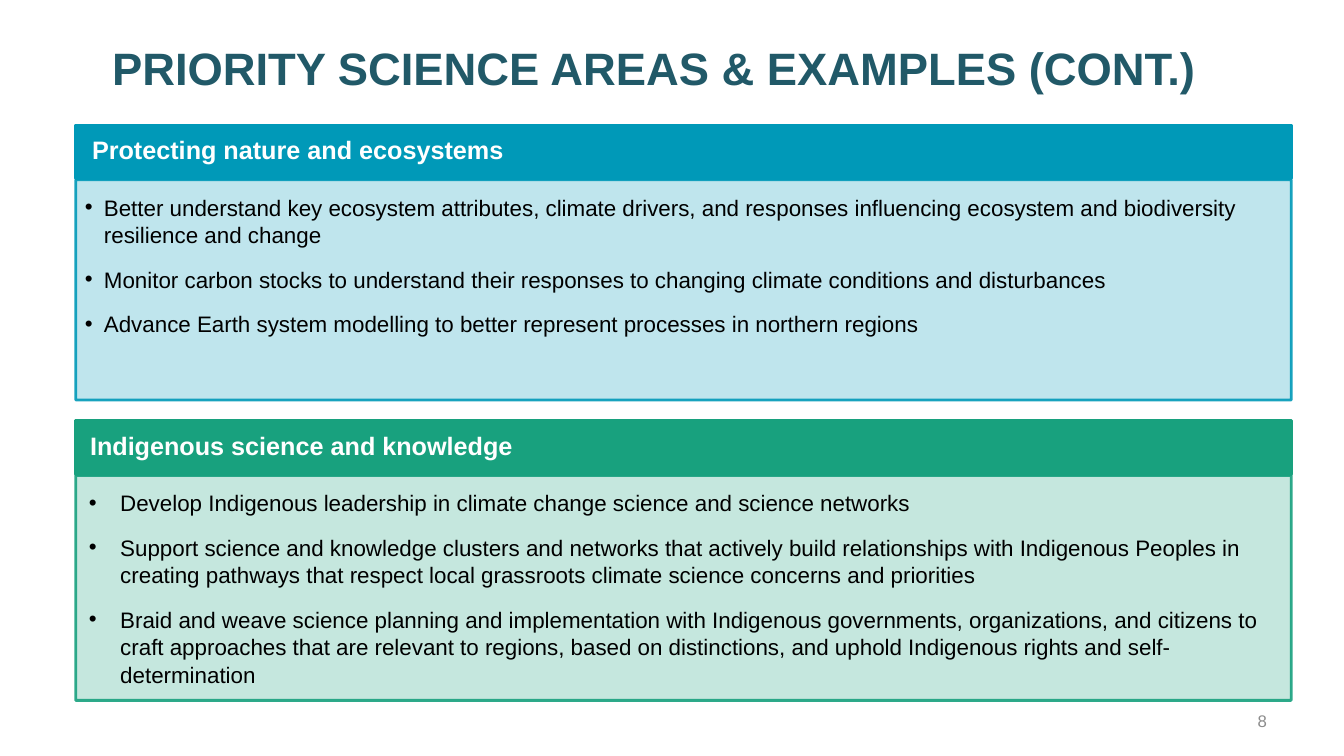
from pptx import Presentation
from pptx import util as u
from pptx.dml.color import RGBColor
from pptx.enum import shapes, text
from pptx.oxml.ns import qn
from lxml import etree

FONT = "Arial"
COLOURS = {
    "title": "215968",
    "nature": "0099B8",
    "indigenous": "18A17E",
    "heading": "FFFFFF",
    "body": "000000",
    "number": "8C8C8C",
}
HEADER_HEIGHT = 1.35

SECTIONS = [
    {
        "colour": "nature",
        "box": (1.91, 3.15, 30.63, 6.93),
        "heading": "Protecting nature and ecosystems",
        "heading_inset": 0.41,
        "insets": (0.23, 0.33, 0.3, 0.33),
        "indent": 0.48,
        "bullets": [
            "Better understand key ecosystem attributes, climate drivers, and responses "
            "influencing ecosystem and biodiversity resilience and change",
            "Monitor carbon stocks to understand their responses to changing climate "
            "conditions and disturbances",
            "Advance Earth system modelling to better represent processes in northern regions",
        ],
    },
    {
        "colour": "indigenous",
        "box": (1.91, 10.6, 30.63, 7.05),
        "heading": "Indigenous science and knowledge",
        "heading_inset": 0.36,
        "insets": (0.33, 0.33, 0.33, 0.33),
        "indent": 0.79,
        "bullets": [
            "Develop Indigenous leadership in climate change science and science networks",
            "Support science and knowledge clusters and networks that actively build "
            "relationships with Indigenous Peoples in creating pathways that respect local "
            "grassroots climate science concerns and priorities",
            "Braid and weave science planning and implementation with Indigenous governments, "
            "organizations, and citizens to craft approaches that are relevant to regions, "
            "based on distinctions, and uphold Indigenous rights and self-determination",
        ],
    },
]


def rgb(name):
    return RGBColor.from_string(COLOURS[name])


def place(shape, box):
    shape.left, shape.top, shape.width, shape.height = (u.Cm(value) for value in box)


def format_runs(paragraph, size, colour, bold=False):
    for run in paragraph.runs:
        run.font.name = FONT
        run.font.size = u.Pt(size)
        run.font.bold = bold
        run.font.color.rgb = rgb(colour)


def paint(shape, colour):
    shape.fill.solid()
    shape.fill.fore_color.rgb = rgb(colour)
    shape.line.color.rgb = rgb(colour)
    shape.line.width = u.Pt(2)


def set_opacity(parent, percent):
    """Make the solid fill directly inside parent partly transparent."""
    colour = parent.find(qn("a:solidFill"))[0]
    etree.SubElement(colour, qn("a:alpha"), val=str(percent * 1000))


def add_bullet(paragraph, indent):
    properties = paragraph._p.get_or_add_pPr()
    properties.set("marL", str(u.Cm(indent)))
    properties.set("indent", str(-u.Cm(indent)))
    etree.SubElement(properties, qn("a:buChar"), char="•")


def add_title(slide, box):
    title = slide.shapes.title
    place(title, box)
    frame = title.text_frame
    frame.text = "PRIORITY SCIENCE AREAS & EXAMPLES (CONT.)"
    frame.auto_size = text.MSO_AUTO_SIZE.NONE
    frame.vertical_anchor = text.MSO_ANCHOR.MIDDLE
    frame.paragraphs[0].alignment = text.PP_ALIGN.CENTER
    format_runs(frame.paragraphs[0], 32.4, "title", bold=True)


def add_header(slide, box, section):
    header = slide.shapes.add_shape(
        shapes.MSO_SHAPE.RECTANGLE, *(u.Cm(value) for value in box))
    header.shadow.inherit = False
    paint(header, section["colour"])
    frame = header.text_frame
    frame.text = section["heading"]
    frame.margin_left = frame.margin_right = u.Cm(section["heading_inset"])
    frame.vertical_anchor = text.MSO_ANCHOR.MIDDLE
    paragraph = frame.paragraphs[0]
    paragraph.alignment = text.PP_ALIGN.LEFT
    paragraph.line_spacing = 0.9
    format_runs(paragraph, 18, "heading", bold=True)


def fill_panel(panel, box, section):
    place(panel, box)
    paint(panel, section["colour"])
    properties = panel.element.spPr
    set_opacity(properties, 25)
    set_opacity(properties.find(qn("a:ln")), 90)

    frame = panel.text_frame
    frame.text = "\n".join(section["bullets"])
    frame.auto_size = text.MSO_AUTO_SIZE.NONE
    frame.vertical_anchor = text.MSO_ANCHOR.TOP
    (frame.margin_left, frame.margin_top,
     frame.margin_right, frame.margin_bottom) = (u.Cm(inset) for inset in section["insets"])
    for paragraph in frame.paragraphs:
        add_bullet(paragraph, section["indent"])
        paragraph.line_spacing = 1.03
        paragraph.space_before = u.Pt(0)
        paragraph.space_after = u.Pt(12)
        format_runs(paragraph, 16, "body")


def add_section(slide, panel, section):
    left, top, width, height = section["box"]
    add_header(slide, (left, top, width, HEADER_HEIGHT), section)
    panel_box = (left, top + HEADER_HEIGHT + 0.03, width, height - HEADER_HEIGHT - 0.03)
    fill_panel(panel, panel_box, section)


def add_slide_number(slide, box):
    number = slide.shapes.add_textbox(*(u.Cm(value) for value in box))
    frame = number.text_frame
    frame.word_wrap = True
    frame.text = "8"
    frame.vertical_anchor = text.MSO_ANCHOR.MIDDLE
    frame.paragraphs[0].alignment = text.PP_ALIGN.RIGHT
    format_runs(frame.paragraphs[0], 12, "number")


def main():
    presentation = Presentation()
    presentation.slide_width = u.Cm(33.87)
    presentation.slide_height = u.Cm(19.05)
    two_content = presentation.slide_layouts.get_by_name("Two Content")
    slide = presentation.slides.add_slide(two_content)

    add_title(slide, (1.24, 0.3, 30.48, 2.82))
    panels = [slide.placeholders[1], slide.placeholders[2]]
    for panel, section in zip(panels, SECTIONS):
        add_section(slide, panel, section)
    add_slide_number(slide, (24.28, 17.65, 7.9, 1.02))
    presentation.save("out.pptx")


if __name__ == "__main__":
    main()
